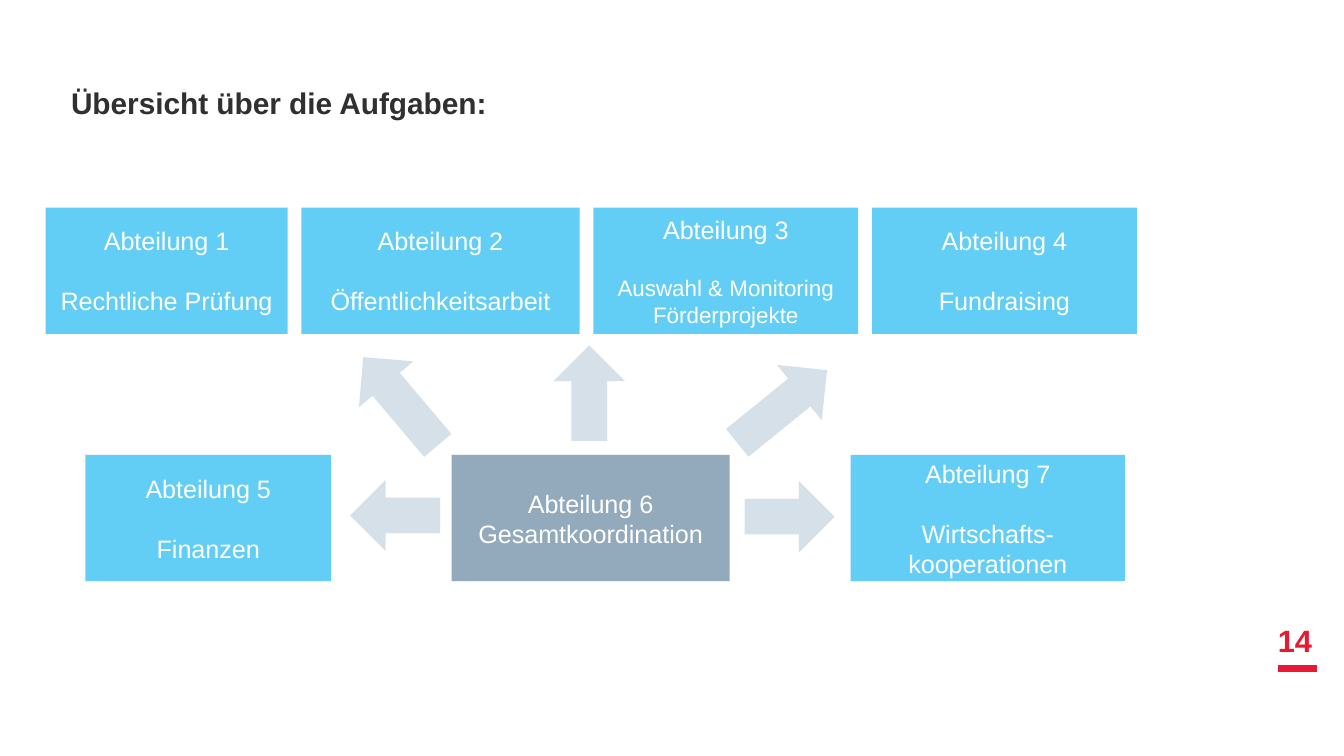
from dataclasses import dataclass

from lxml import etree
from pptx import Presentation
from pptx.dml.color import RGBColor
from pptx.enum.shapes import MSO_CONNECTOR, MSO_SHAPE
from pptx.enum.text import MSO_ANCHOR, PP_ALIGN
from pptx.oxml.ns import qn
from pptx.util import Emu, Inches, Pt

RECTANGLE = MSO_SHAPE.RECTANGLE
ARROW = MSO_SHAPE.RIGHT_ARROW
STRAIGHT = MSO_CONNECTOR.STRAIGHT
TOP, MIDDLE, BOTTOM = MSO_ANCHOR.TOP, MSO_ANCHOR.MIDDLE, MSO_ANCHOR.BOTTOM
LEFT, CENTER = PP_ALIGN.LEFT, PP_ALIGN.CENTER

COLORS = {
    "department": "00B0F0",
    "coordination": "4F7393",
    "arrow": "BDCDDB",
    "white": "FFFFFF",
    "title": "303030",
    "accent": "E81A33",
}
FONT = "Arial"
OPACITY = 61
CELL = Inches(0.1)
COLUMNS, ROWS = 100, 56.25
UPPER_ROW, LOWER_ROW = 15.45, 33.85
BOX_ROWS = 9.4
UPPER_START, UPPER_GAP = 3.4, 1.03
ARROW_ROWS = 5.3
BODY_SIZE = 13.5
TASK_GAP = 16


@dataclass(frozen=True)
class Area:
    column: float
    row: float
    columns: float
    rows: float


@dataclass(frozen=True)
class Department:
    number: int
    task: str
    columns: float
    column: float = 0
    task_size: float = BODY_SIZE
    gap: float = TASK_GAP
    color: str = "department"


@dataclass(frozen=True)
class Direction:
    column: float
    row: float
    columns: float
    rotation: float


UPPER = [
    Department(1, "Rechtliche Prüfung", 18),
    Department(2, "Öffentlichkeitsarbeit", 20.7),
    Department(3, "Auswahl & Monitoring Förderprojekte", 19.7, task_size=12),
    Department(4, "Fundraising", 19.7),
]
LOWER = [
    Department(5, "Finanzen", 18.3, 6.35),
    Department(6, "Gesamtkoordination", 20.7, 33.6, gap=0, color="coordination"),
    Department(7, "Wirtschafts-kooperationen", 20.4, 63.3),
]
DIRECTIONS = [
    Direction(55.4, 35.8, 6.7, 0),
    Direction(53.9, 27.6, 8.6, 321),
    Direction(40.3, 26.6, 7.1, 270),
    Direction(25.5, 27.2, 8.6, 229.8),
    Direction(26.05, 35.7, 6.7, 180),
]


def cells(count: float) -> Emu:
    return Emu(round(count * CELL))


def place(area: Area) -> tuple:
    return tuple(cells(value) for value in (area.column, area.row, area.columns, area.rows))


def color(name: str) -> RGBColor:
    return RGBColor.from_string(COLORS[name])


def add_text(paragraph, text: str, size: float, color_name: str,
             bold: bool = False, alignment=CENTER) -> None:
    paragraph.alignment = alignment
    run = paragraph.add_run()
    run.text = text
    run.font.name = FONT
    run.font.size = Pt(size)
    run.font.bold = bold
    run.font.color.rgb = color(color_name)


def add_label(slide, area: Area, text: str, size: float, color_name: str,
              alignment, anchor) -> None:
    frame = slide.shapes.add_textbox(*place(area)).text_frame
    frame.word_wrap = True
    frame.vertical_anchor = anchor
    add_text(frame.paragraphs[0], text, size, color_name, True, alignment)


def add_translucent_shape(slide, kind, area: Area, color_name: str):
    shape = slide.shapes.add_shape(kind, *place(area))
    shape.shadow.inherit = False
    shape.line.fill.background()
    shape.fill.solid()
    shape.fill.fore_color.rgb = color(color_name)
    fill_color = shape._element.spPr.find(qn("a:solidFill"))[0]
    etree.SubElement(fill_color, qn("a:alpha"), val=str(OPACITY * 1000))
    return shape


def add_department(slide, department: Department, column: float, row: float) -> None:
    area = Area(column, row, department.columns, BOX_ROWS)
    shape = add_translucent_shape(slide, RECTANGLE, area, department.color)
    frame = shape.text_frame
    frame.word_wrap = True
    frame.vertical_anchor = MIDDLE
    frame.margin_left = frame.margin_right = Inches(0.08)
    add_text(frame.paragraphs[0], f"Abteilung {department.number}", BODY_SIZE, "white")
    task = frame.add_paragraph()
    task.space_before = Pt(department.gap)
    add_text(task, department.task, department.task_size, "white")


def add_direction(slide, direction: Direction) -> None:
    area = Area(direction.column, direction.row, direction.columns, ARROW_ROWS)
    shape = add_translucent_shape(slide, ARROW, area, "arrow")
    shape.rotation = direction.rotation


def add_page_number(slide) -> None:
    line = slide.shapes.add_connector(
        STRAIGHT, cells(95.1), cells(49.75), cells(98), cells(49.75))
    line.line.color.rgb = color("accent")
    line.line.width = Pt(3.5)
    etree.SubElement(line._element.spPr, qn("a:effectLst"))
    add_label(slide, Area(93, 44, 6.7, 5.5), "14", 16.5, "accent", CENTER, BOTTOM)


def main() -> None:
    presentation = Presentation()
    presentation.slide_width = cells(COLUMNS)
    presentation.slide_height = cells(ROWS)
    slide = presentation.slides.add_slide(presentation.slide_layouts[6])

    add_page_number(slide)
    add_label(slide, Area(4.3, 5.8, 70.1, 34.1), "Übersicht über die Aufgaben:",
              16, "title", LEFT, TOP)
    column = UPPER_START
    for department in UPPER:
        add_department(slide, department, column, UPPER_ROW)
        column += department.columns + UPPER_GAP
    for department in LOWER:
        add_department(slide, department, department.column, LOWER_ROW)
    for direction in DIRECTIONS:
        add_direction(slide, direction)

    presentation.save("out.pptx")


if __name__ == "__main__":
    main()
